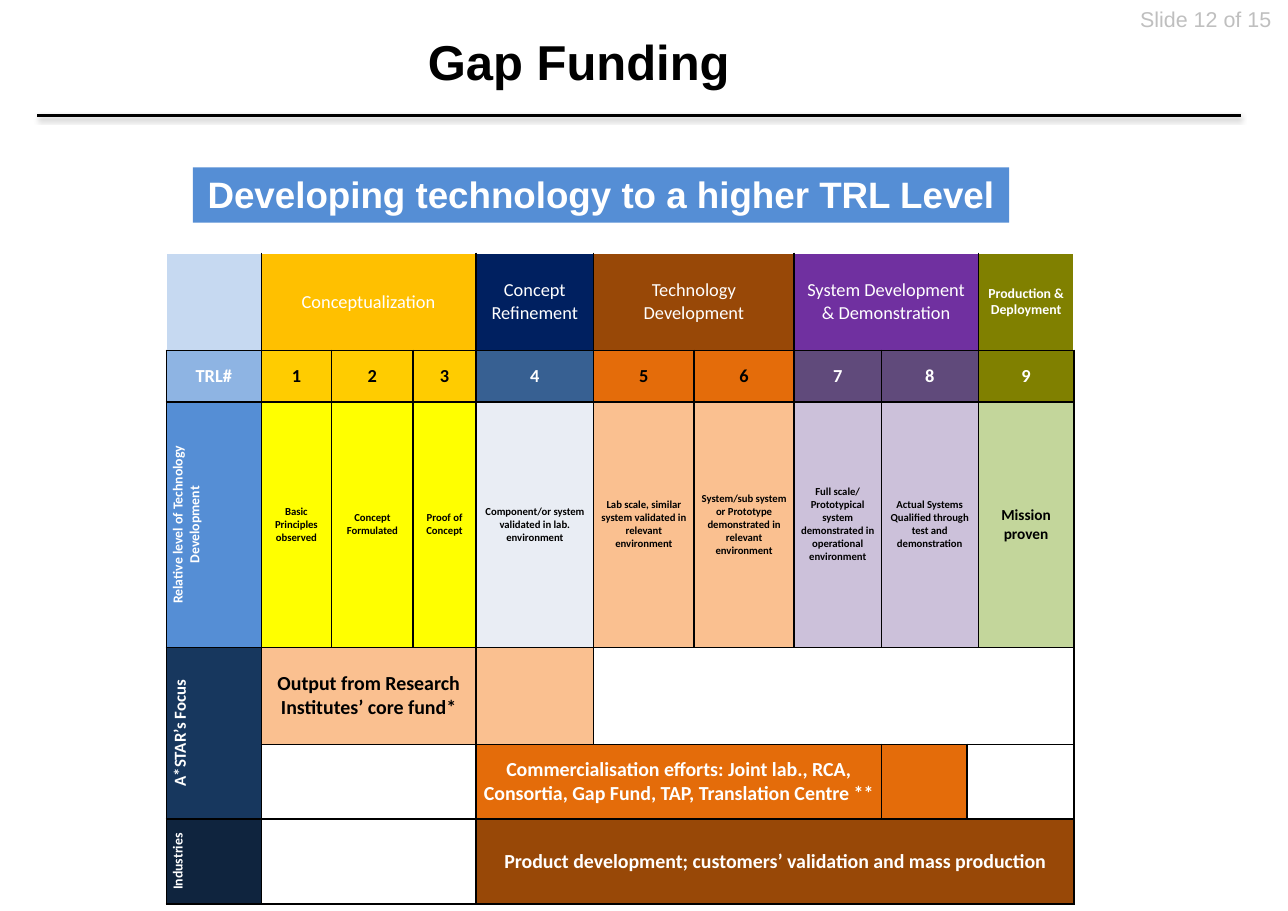
from lxml import etree
from pptx import Presentation
from pptx import util as u
from pptx.dml.color import RGBColor
from pptx.enum import shapes, text
from pptx.oxml import ns, parse_xml

WIDE, HIGH = 11.69, 8.27
COLS = [7.36, 5.47, 6.33, 4.88, 9.15, 7.78, 7.78, 6.76, 6.67, 0.86, 7.44]
ROWS = [10.64, 5.68, 26.84, 10.64, 8.22, 9.31]
WHITE, BLACK = "FFFFFF", "000000"
GOLD, YELLOW, PEACH, RUST = "FFCC00", "FFFF00", "FAC090", "984807"
ORANGE, PLUM, LILAC, OLIVE, BLUE = "E46C0A", "604A7B", "CCC1DA", "808000", "558ED5"

# Each cell: words, fill, ink, size, columns spanned
CELLS = [
    [("", "C6D9F1", WHITE, 12, 1),
     ("Conceptualization", "FFC000", WHITE, 12, 3),
     ("Concept Refinement", "002060", WHITE, 12, 1),
     ("Technology Development", RUST, WHITE, 12, 2),
     ("System Development & Demonstration", "7030A0", WHITE, 12, 3),
     ("Production & Deployment", OLIVE, WHITE, 9, 1)],
    [("TRL#", "8EB4E3", WHITE, 12, 1),
     ("1", GOLD, BLACK, 12, 1),
     ("2", GOLD, BLACK, 12, 1),
     ("3", GOLD, BLACK, 12, 1),
     ("4", "376092", WHITE, 12, 1),
     ("5", ORANGE, BLACK, 12, 1),
     ("6", ORANGE, BLACK, 12, 1),
     ("7", PLUM, WHITE, 12, 1),
     ("8", PLUM, WHITE, 12, 2),
     ("9", OLIVE, WHITE, 12, 1)],
    [("Relative level of Technology Development", BLUE, WHITE, 9, 1),
     ("Basic Principles observed", YELLOW, BLACK, 7, 1),
     ("Concept Formulated", YELLOW, BLACK, 7, 1),
     ("Proof of Concept", YELLOW, BLACK, 7, 1),
     ("Component/or system validated in lab. environment", "E9EDF4", BLACK, 7, 1),
     ("Lab scale, similar system validated in relevant environment", PEACH, BLACK, 7, 1),
     ("System/sub system or Prototype demonstrated in relevant environment",
      PEACH, BLACK, 7, 1),
     ("Full scale/ Prototypical system demonstrated in operational environment",
      LILAC, BLACK, 7, 1),
     ("Actual Systems Qualified through test and demonstration", LILAC, BLACK, 7, 2),
     ("Mission proven", "C3D69B", BLACK, 10, 1)],
    [("A*STAR’s Focus", "17375E", WHITE, 11, 1),
     ("Output from Research Institutes’ core fund*", PEACH, BLACK, 13, 3),
     ("", PEACH, BLACK, 13, 1),
     ("", WHITE, BLACK, 13, 6)],
    [None,
     ("", WHITE, BLACK, 13, 3),
     ("Commercialisation efforts: Joint lab., RCA, Consortia, Gap Fund, TAP, "
      "Translation Centre **", ORANGE, WHITE, 13, 4),
     ("", ORANGE, WHITE, 13, 1),
     ("", WHITE, BLACK, 13, 2)],
    [("Industries", "0F243E", WHITE, 9, 1),
     ("", WHITE, BLACK, 13, 3),
     ("Product development; customers’ validation and mass production",
      RUST, WHITE, 13, 7)],
]


def across(share):
    return u.Inches(WIDE * share / 100)


def down(share):
    return u.Inches(HIGH * share / 100)


def place(x, y, w, h):
    return across(x), down(y), across(w), down(h)


def tint(code):
    return RGBColor.from_string(code)


def style(item, **form):
    for name, value in form.items():
        setattr(item, name, value)


def paint(item, code):
    item.fill.solid()
    item.fill.fore_color.rgb = tint(code)


def write(frame, words, ink, size, face="Arial", bold=True, align="CENTER"):
    part = frame.paragraphs[0]
    part.alignment = text.PP_ALIGN[align]
    run = part.add_run()
    run.text = words
    style(run.font, name=face, size=u.Pt(size), bold=bold)
    run.font.color.rgb = tint(ink)


def label(slide, box, words, ink, size, wrap=True, **form):
    frame = slide.shapes.add_textbox(*box).text_frame
    style(frame, word_wrap=wrap, vertical_anchor=text.MSO_ANCHOR.MIDDLE)
    write(frame, words, ink, size, **form)


def banner(slide, box, words):
    shape = slide.shapes.add_shape(shapes.MSO_SHAPE.RECTANGLE, *box)
    shape.shadow.inherit = False
    paint(shape, BLUE)
    shape.line.fill.background()
    side, edge = u.Inches(0.09), u.Inches(0.04)
    style(shape.text_frame, word_wrap=True, margin_left=side, margin_right=side,
          margin_top=edge, margin_bottom=edge, vertical_anchor=text.MSO_ANCHOR.TOP)
    write(shape.text_frame, words, WHITE, 24)


def rule(slide, left, right, y):
    line = slide.shapes.add_connector(
        shapes.MSO_CONNECTOR.STRAIGHT, across(left), down(y), across(right), down(y))
    line.line.width = u.Pt(2)
    line.line.color.rgb = tint(BLACK)
    line._element.spPr.append(parse_xml(
        f'<a:effectLst {ns.nsdecls("a")}><a:outerShdw blurRad="{u.Pt(3.1)}" '
        f'dist="{u.Pt(1.6)}" dir="5400000" rotWithShape="0"><a:srgbClr val="{BLACK}">'
        '<a:alpha val="38000"/></a:srgbClr></a:outerShdw></a:effectLst>'))


def border(cell, sides):
    prop = cell._tc.get_or_add_tcPr()
    for spot, (side, code) in enumerate(sides.items()):
        edge = etree.Element(ns.qn(f"a:ln{side}"), w=str(u.Pt(1)))
        fill = etree.SubElement(edge, ns.qn("a:solidFill"))
        etree.SubElement(fill, ns.qn("a:srgbClr"), val=code)
        prop.insert(spot, edge)


def fill(cell, words, code, ink, size, bold):
    paint(cell, code)
    side, edge = u.Inches(0.06), u.Inches(0.03)
    style(cell, margin_left=side, margin_right=side, margin_top=edge,
          margin_bottom=edge, vertical_anchor=text.MSO_ANCHOR.MIDDLE)
    if words:
        write(cell.text_frame, words, ink, size, "Calibri", bold)


def chart(slide, x, y):
    box = place(x, y, sum(COLS), sum(ROWS))
    grid = slide.shapes.add_table(len(ROWS), len(COLS), *box).table
    style(grid, first_row=False, horz_banding=False)
    for col, share in zip(grid.columns, COLS):
        col.width = across(share)
    for row, share in zip(grid.rows, ROWS):
        row.height = down(share)
    for r, row in enumerate(CELLS):
        c = 0
        for item in row:
            if item is None:
                c += 1
                continue
            words, code, ink, size, span = item
            cell = grid.cell(r, c)
            fill(cell, words, code, ink, size, r > 0 or size == 9)
            if c == 0 and r > 1:
                cell._tc.get_or_add_tcPr().set("vert", "vert270")
            if span > 1:
                cell.merge(grid.cell(r, c + span - 1))
            c += span
    grid.cell(3, 0).merge(grid.cell(4, 0))
    last = len(COLS) - 1
    for r in range(len(ROWS)):
        for c in range(len(COLS)):
            border(grid.cell(r, c), {
                "L": WHITE if r == 0 and c == 0 else BLACK,
                "R": WHITE if r == 0 and c == last else BLACK,
                "T": WHITE if r == 0 else BLACK,
                "B": BLACK})


def main():
    deck = Presentation()
    style(deck, slide_width=across(100), slide_height=down(100))
    slide = deck.slides.add_slide(deck.slide_layouts[6])
    label(slide, place(87.68, 0, 12.15, 4.11), "Slide 12 of 15", "BFBFBF", 14,
          wrap=False, bold=False, align="LEFT")
    rule(slide, 2.91, 96.32, 12.7)
    label(slide, place(2.91, 1.69, 84.09, 10.04), "Gap Funding", BLACK, 32)
    chart(slide, 12.92, 27.81)
    banner(slide, place(14.97, 18.38, 63.39, 6.05),
           "Developing technology to a higher TRL Level")
    deck.save("out.pptx")


if __name__ == "__main__":
    main()
